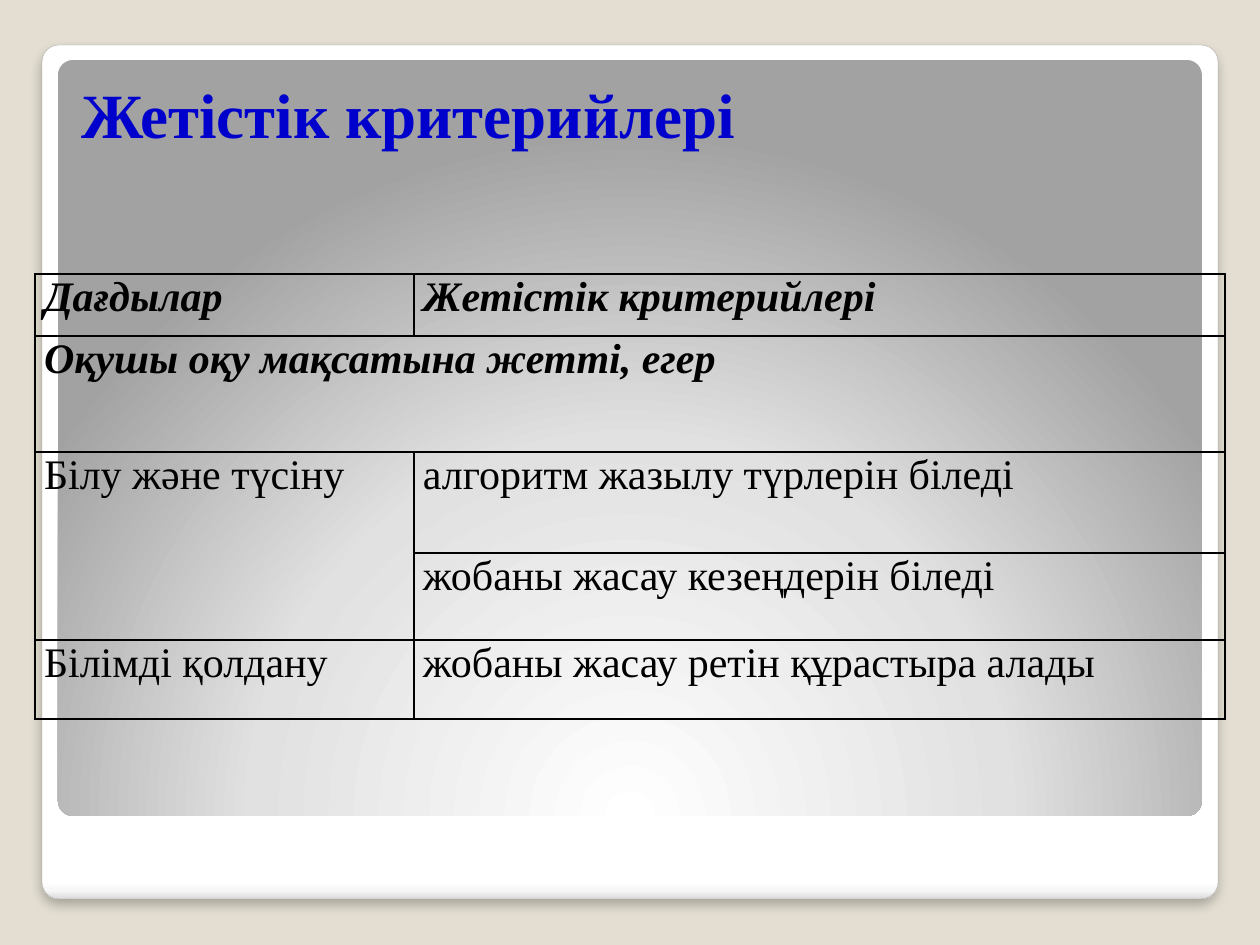
from dataclasses import dataclass
from typing import Optional

from lxml.etree import SubElement
from pptx import Presentation
from pptx.dml.color import RGBColor
from pptx.enum.shapes import MSO_SHAPE as Preset
from pptx.enum.text import MSO_ANCHOR as Anchor, PP_ALIGN as Align
from pptx.oxml import parse_xml
from pptx.oxml.ns import nsdecls, qn
from pptx.util import Emu, Pt

EMU_PER_PX = 914400 / 126
FONT = "Times New Roman"
LINEAR_DOWN = '<a:lin ang="5400000" scaled="0"/>'
GLOW_FROM_BELOW = ('<a:path path="circle"><a:fillToRect l="50000" t="175000" '
                   'r="50000" b="-75000"/></a:path>')


@dataclass
class Panel:
    left: int
    top: int
    width: int
    height: int
    stops: list[tuple[int, str]]
    direction: str
    outline: Optional[str] = None
    shadowed: bool = False


@dataclass
class Entry:
    row: int
    col: int
    wording: str
    heading: bool = False
    align: Align = Align.LEFT
    rows: int = 1
    cols: int = 1


PANELS = [
    Panel(42, 45, 1176, 854,
          [(0, "FFFFFF"), (98, "FFFFFF"), (99, "F7F7F7"), (100, "DADADA")],
          LINEAR_DOWN, outline="A4A4A4", shadowed=True),
    Panel(58, 60, 1144, 756, [(0, "FFFFFF"), (55, "E1E1E1"), (100, "A2A2A2")],
          GLOW_FROM_BELOW),
]
COLUMN_WIDTHS = [379, 811]
ROW_HEIGHTS = [62, 116, 101, 87, 79]
ENTRIES = [
    Entry(0, 0, "Дағдылар", heading=True),
    Entry(0, 1, "Жетістік критерийлері", heading=True),
    Entry(1, 0, "Оқушы оқу мақсатына жетті, егер", heading=True, cols=2),
    Entry(2, 0, "Білу және түсіну", rows=2),
    Entry(2, 1, "алгоритм жазылу түрлерін біледі", align=Align.JUSTIFY),
    Entry(3, 1, "жобаны жасау кезеңдерін біледі"),
    Entry(4, 0, "Білімді қолдану", align=Align.JUSTIFY),
    Entry(4, 1, "жобаны жасау ретін құрастыра алады", align=Align.JUSTIFY),
]


def px(length: int) -> Emu:
    return Emu(round(length * EMU_PER_PX))


def color(value: str) -> RGBColor:
    return RGBColor.from_string(value)


def format_text(frame, size: int, ink: str, align: Align, bold: bool, italic: bool = False) -> None:
    for paragraph in frame.paragraphs:
        paragraph.alignment = align
        for run in paragraph.runs:
            font = run.font
            font.name, font.size = FONT, Pt(size)
            font.bold, font.italic = bold, italic
            font.color.rgb = color(ink)


def add_soft_shadow(properties) -> None:
    effects = properties.find(qn("a:effectLst"))
    shadow = SubElement(effects, qn("a:outerShdw"), blurRad=str(Pt(6)),
                        dist=str(Pt(4)), dir="5400000", algn="t", rotWithShape="0")
    black = SubElement(shadow, qn("a:srgbClr"), val="000000")
    SubElement(black, qn("a:alpha"), val="25000")


def add_panel(slide, panel: Panel) -> None:
    shape = slide.shapes.add_shape(Preset.ROUNDED_RECTANGLE, px(panel.left), px(panel.top),
                                   px(panel.width), px(panel.height))
    shape.adjustments[0] = 0.02
    properties = shape._element.spPr
    stops = "".join(f'<a:gs pos="{percent * 1000}"><a:srgbClr val="{tone}"/></a:gs>'
                    for percent, tone in panel.stops)
    properties.find(qn("a:prstGeom")).addnext(parse_xml(
        f'<a:gradFill {nsdecls("a")} rotWithShape="1"><a:gsLst>{stops}</a:gsLst>'
        f'{panel.direction}</a:gradFill>'))
    if panel.outline:
        shape.line.color.rgb = color(panel.outline)
        shape.line.width = Pt(0.16)
    else:
        shape.line.fill.background()
    shape.shadow.inherit = False
    if panel.shadowed:
        add_soft_shadow(properties)


def style_cell(cell) -> None:
    """Give a cell thin black borders, tight margins and no fill."""
    properties = cell._tc.get_or_add_tcPr()
    for side in ("lnL", "lnR", "lnT", "lnB"):
        border = SubElement(properties, qn(f"a:{side}"), w=str(Pt(1)))
        fill = SubElement(border, qn("a:solidFill"))
        SubElement(fill, qn("a:srgbClr"), val="000000")
    cell.fill.background()
    cell.margin_left = cell.margin_right = px(9)
    cell.margin_top = cell.margin_bottom = 0


def add_criteria(slide) -> None:
    table = slide.shapes.add_table(len(ROW_HEIGHTS), len(COLUMN_WIDTHS), px(35), px(274),
                                   px(sum(COLUMN_WIDTHS)), px(sum(ROW_HEIGHTS))).table
    table.first_row = table.horz_banding = False
    for column, width in zip(table.columns, COLUMN_WIDTHS):
        column.width = px(width)
    for row, height in zip(table.rows, ROW_HEIGHTS):
        row.height = px(height)
    for cell in table.iter_cells():
        style_cell(cell)
    for entry in ENTRIES:
        cell = table.cell(entry.row, entry.col)
        if entry.rows * entry.cols > 1:
            cell.merge(table.cell(entry.row + entry.rows - 1, entry.col + entry.cols - 1))
        cell.text_frame.text = entry.wording
        format_text(cell.text_frame, 24, "000000", entry.align, entry.heading, entry.heading)


def place_title(slide) -> None:
    title = slide.shapes.title
    title.left, title.top, title.width, title.height = px(69), px(0), px(1134), px(157)
    frame = title.text_frame
    frame.text = "Жетістік критерийлері"
    frame.vertical_anchor = Anchor.BOTTOM
    format_text(frame, 36, "0000CC", Align.LEFT, bold=True)
    slide.shapes._spTree.append(title._element)  # in front of the panels


def main() -> None:
    deck = Presentation()
    deck.slide_width, deck.slide_height = px(1260), px(945)
    slide = deck.slides.add_slide(deck.slide_layouts[5])
    slide.background.fill.solid()
    slide.background.fill.fore_color.rgb = color("E3DED1")
    for panel in PANELS:
        add_panel(slide, panel)
    place_title(slide)
    add_criteria(slide)
    deck.save("out.pptx")


if __name__ == "__main__":
    main()
